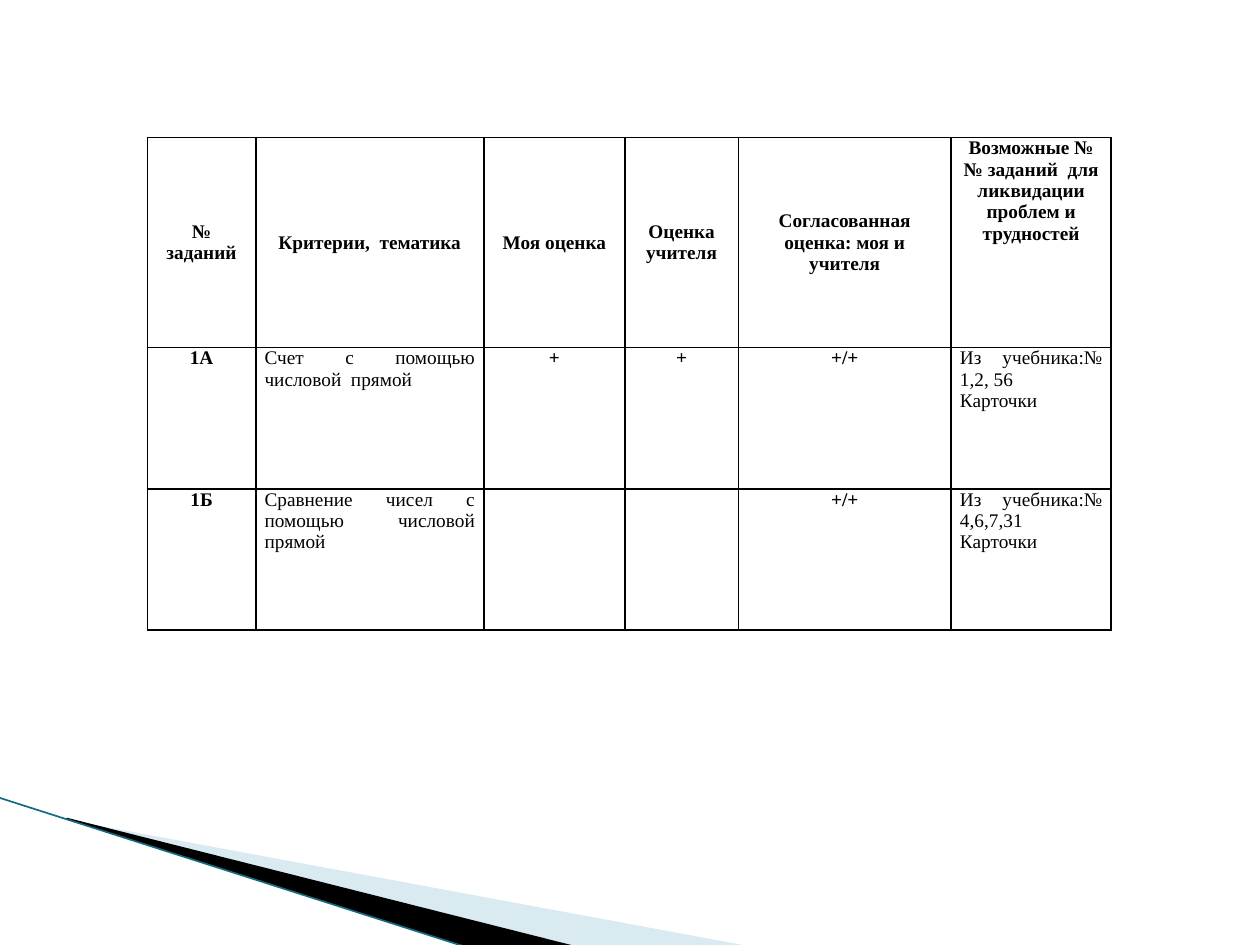
from lxml.etree import SubElement
from pptx import Presentation
from pptx.dml.color import RGBColor
from pptx.enum.text import MSO_ANCHOR as Anchor, PP_ALIGN as Align
from pptx.oxml.ns import qn
from pptx.util import Inches, Pt

WIDTH, HEIGHT = 10, 7.5
FONT = "Times New Roman"
INK = "000000"
COLUMNS = [0.86, 1.81, 1.12, 0.9, 1.69, 1.27]
ROWS = [1.67, 1.12, 1.12]
HEADINGS = [
    "№\nзаданий",
    "Критерии,  тематика",
    "Моя оценка",
    "Оценка учителя",
    "Согласованная\nоценка: моя и учителя",
    "Возможные №№ заданий  для ликвидации проблем и трудностей",
]
TASKS = [
    ["1А", "Счет с помощью числовой  прямой", "+", "+", "+/+",
     "Из учебника:№ 1,2, 56\nКарточки"],
    ["1Б", "Сравнение чисел с помощью  числовой прямой", "", "", "+/+",
     "Из учебника:№ 4,6,7,31\nКарточки"],
]
PROSE_COLUMNS = (1, 5)
WEDGES = [
    ([(0, 0.01), (1, 1), (0.74, 1), (0, 0)], (0.55, 6.5, 5.4, 1.01), "A0CBDC", 40),
    ([(0, 0), (1, 0.99), (0.79, 1), (0, 0.01)], (0.53, 6.49, 4.04, 1.03), INK, 100),
]


def color(value):
    return RGBColor.from_string(value)


def write(frame, text, size=11, bold=False, align=Align.CENTER):
    for index, line in enumerate(text.split("\n")):
        para = frame.add_paragraph() if index else frame.paragraphs[0]
        para.alignment = align
        span = para.add_run()
        span.text = line
        span.font.name = FONT
        span.font.size = Pt(size)
        span.font.bold = bold
        span.font.color.rgb = color(INK)


def draw_borders(cell, width=1):
    properties = cell._tc.get_or_add_tcPr()
    for side in ("a:lnL", "a:lnR", "a:lnT", "a:lnB"):
        border = SubElement(properties, qn(side), w=str(Pt(width)))
        fill = SubElement(border, qn("a:solidFill"))
        SubElement(fill, qn("a:srgbClr"), val=INK)


def add_wedge(page, points, box, fill, opacity):
    left, top, width, height = box
    corners = [(Inches(left + x * width), Inches(top + y * height)) for x, y in points]
    builder = page.shapes.build_freeform(*corners[0])
    builder.add_line_segments(corners[1:], close=True)
    wedge = builder.convert_to_shape()
    wedge.shadow.inherit = False
    wedge.fill.solid()
    wedge.fill.fore_color.rgb = color(fill)
    wedge.line.fill.background()
    if opacity < 100:
        tint = wedge._element.spPr.find(".//" + qn("a:srgbClr"))
        SubElement(tint, qn("a:alpha"), val=str(opacity * 1000))


def add_corner(page, box):
    for wedge in WEDGES:
        add_wedge(page, *wedge)
    left, top, width, height = box
    ends = (left, top, left + width, top + height)
    edge = page.shapes.add_connector(1, *map(Inches, ends))
    edge.line.color.rgb = color("16697F")
    edge.line.width = Pt(0.95)
    SubElement(edge._element.spPr, qn("a:effectLst"))


def add_grades(page, box):
    records = [HEADINGS, *TASKS]
    frame = page.shapes.add_table(len(ROWS), len(COLUMNS), *map(Inches, box))
    table = frame.table
    table.first_row = table.horz_banding = False
    for column, width in zip(table.columns, COLUMNS):
        column.width = Inches(width)
    for row, height in zip(table.rows, ROWS):
        row.height = Inches(height)
    for row, record in enumerate(records):
        for column, text in enumerate(record):
            cell = table.cell(row, column)
            cell.margin_left = cell.margin_right = Inches(0.07)
            cell.margin_top = cell.margin_bottom = 0
            centred = row == 0 and column < len(COLUMNS) - 1
            cell.vertical_anchor = Anchor.MIDDLE if centred else Anchor.TOP
            draw_borders(cell)
            cell.fill.background()
            prose = row > 0 and column in PROSE_COLUMNS
            if text:
                write(cell.text_frame, text, bold=not prose,
                      align=Align.JUSTIFY if prose else Align.CENTER)


def main():
    deck = Presentation()
    deck.slide_width, deck.slide_height = Inches(WIDTH), Inches(HEIGHT)
    page = deck.slides.add_slide(deck.slide_layouts[6])
    page.background.fill.solid()
    page.background.fill.fore_color.rgb = color("FFFFFF")
    add_corner(page, (-0.01, 6.33, 3.72, 1.19))
    add_grades(page, (1.17, 1.09, sum(COLUMNS), sum(ROWS)))
    deck.save("out.pptx")


if __name__ == "__main__":
    main()
